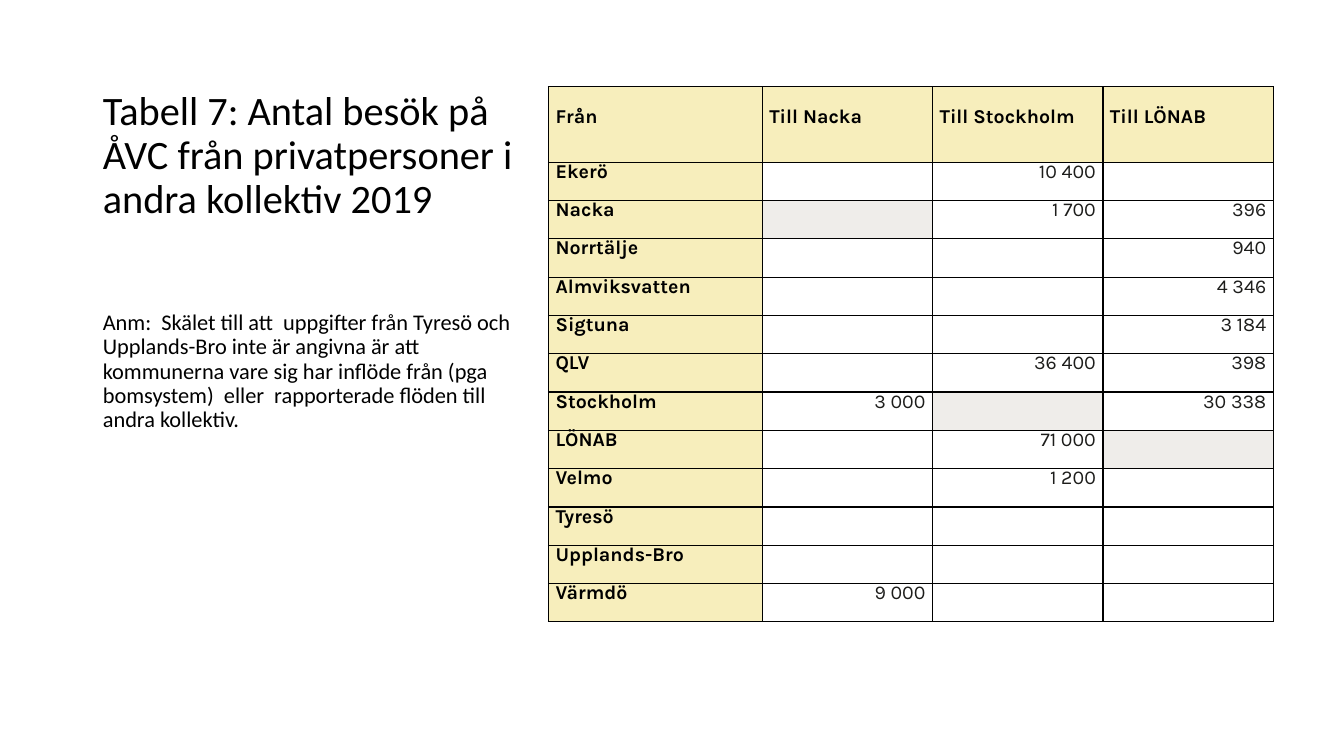
"""Build the slide with the table of recycling-centre visits between collectives."""
from dataclasses import dataclass

from lxml import etree
from pptx import Presentation
from pptx import util as u
from pptx.dml.color import RGBColor
from pptx.enum import text as t
from pptx.oxml import ns

BLACK = RGBColor(0x00, 0x00, 0x00)
INK = RGBColor(0x1D, 0x1D, 0x1B)
YELLOW = RGBColor(0xF7, 0xEE, 0xBC)
GREY = RGBColor(0xEF, 0xED, 0xEA)

HEADERS = ("Från", "Till Nacka", "Till Stockholm", "Till LÖNAB")
COLUMN_WIDTHS = (2.12, 1.69, 1.69, 1.69)
HEADER_HEIGHT, ROW_HEIGHT = 0.75, 0.38
TITLE = "Tabell 7: Antal besök på ÅVC från privatpersoner i andra kollektiv 2019"
REMARK = (
    "Anm:  Skälet till att  uppgifter från Tyresö och Upplands-Bro inte är angivna "
    "är att kommunerna vare sig har inflöde från (pga bomsystem)  eller  "
    "rapporterade flöden till andra kollektiv."
)


@dataclass(frozen=True)
class Visits:
    origin: str
    nacka: str = ""
    stockholm: str = ""
    lonab: str = ""


@dataclass(frozen=True)
class TextBlock:
    wording: str
    top: float
    height: float
    size: float
    inset: float
    anchor: t.MSO_ANCHOR
    before: float


VISITS = (
    Visits("Ekerö", stockholm="10 400"),
    Visits("Nacka", stockholm="1 700", lonab="396"),
    Visits("Norrtälje", lonab="940"),
    Visits("Almviksvatten", lonab="4 346"),
    Visits("Sigtuna", lonab="3 184"),
    Visits("QLV", stockholm="36 400", lonab="398"),
    Visits("Stockholm", nacka="3 000", lonab="30 338"),
    Visits("LÖNAB", stockholm="71 000"),
    Visits("Velmo", stockholm="1 200"),
    Visits("Tyresö"),
    Visits("Upplands-Bro"),
    Visits("Värmdö", nacka="9 000"),
)
TITLE_BLOCK = TextBlock(TITLE, 0.5, 1.75, 28.8, 0.05, t.MSO_ANCHOR.BOTTOM, 0)
REMARK_BLOCK = TextBlock(REMARK, 2.25, 4.17, 16, 0.84, t.MSO_ANCHOR.TOP, 10)


def fill_placeholder(box, block: TextBlock) -> None:
    box.left, box.top = u.Inches(0.92), u.Inches(block.top)
    box.width, box.height = u.Inches(4.3), u.Inches(block.height)
    frame = box.text_frame
    frame.text = block.wording
    frame.word_wrap = True
    frame.auto_size = t.MSO_AUTO_SIZE.NONE
    frame.vertical_anchor = block.anchor
    frame.margin_top = u.Inches(block.inset)
    para = frame.paragraphs[0]
    para.alignment = t.PP_ALIGN.LEFT
    para.line_spacing = 0.9
    para.space_before = u.Pt(block.before)
    font = para.runs[0].font
    font.name, font.size, font.bold = "Calibri", u.Pt(block.size), False
    font.color.rgb = BLACK


def add_borders(cell) -> None:
    properties = cell._tc.get_or_add_tcPr()
    for side in ("lnL", "lnR", "lnT", "lnB"):
        line = etree.SubElement(properties, ns.qn(f"a:{side}"), w=str(u.Pt(1)))
        paint = etree.SubElement(line, ns.qn("a:solidFill"))
        etree.SubElement(paint, ns.qn("a:srgbClr"), val=str(BLACK))


def fill_cell(cell, wording: str, fill: RGBColor | None, label: bool, top: float) -> None:
    add_borders(cell)
    if fill is None:
        cell.fill.background()
    else:
        cell.fill.solid()
        cell.fill.fore_color.rgb = fill
    cell.margin_left = cell.margin_right = u.Inches(0.07)
    cell.margin_top, cell.margin_bottom = u.Inches(top), 0
    cell.text_frame.text = wording
    para = cell.text_frame.paragraphs[0]
    para.alignment = t.PP_ALIGN.LEFT if label else t.PP_ALIGN.RIGHT
    para.line_spacing, para.space_before = u.Pt(15), u.Pt(8.5)
    for span in para.runs:
        span.font.name, span.font.size, span.font.bold = "Karla", u.Pt(14), label
        span.font.color.rgb = BLACK if label else INK


def add_visits_table(page) -> None:
    height = HEADER_HEIGHT + ROW_HEIGHT * len(VISITS)
    table = page.shapes.add_table(
        len(VISITS) + 1, len(HEADERS), u.Inches(5.44), u.Inches(0.86),
        u.Inches(sum(COLUMN_WIDTHS)), u.Inches(height),
    ).table
    table.horz_banding = False
    for column, width in zip(table.columns, COLUMN_WIDTHS):
        column.width = u.Inches(width)
    for row in table.rows:
        row.height = u.Inches(ROW_HEIGHT)
    table.rows[0].height = u.Inches(HEADER_HEIGHT)
    for index, header in enumerate(HEADERS):
        fill_cell(table.cell(0, index), header, YELLOW, True, 0.21)
    for row, visits in enumerate(VISITS, start=1):
        fill_cell(table.cell(row, 0), visits.origin, YELLOW, True, 0)
        counts = (visits.nacka, visits.stockholm, visits.lonab)
        for column, count in enumerate(counts, start=1):
            own = HEADERS[column] == f"Till {visits.origin}"
            fill_cell(table.cell(row, column), count, GREY if own else None, False, 0)


def main() -> None:
    deck = Presentation()
    deck.slide_width, deck.slide_height = u.Inches(13.33), u.Inches(7.5)
    page = deck.slides.add_slide(deck.slide_layouts.get_by_name("Content with Caption"))
    unused = page.placeholders[1].element
    unused.getparent().remove(unused)
    fill_placeholder(page.shapes.title, TITLE_BLOCK)
    fill_placeholder(page.placeholders[2], REMARK_BLOCK)
    add_visits_table(page)
    deck.save("out.pptx")


if __name__ == "__main__":
    main()
